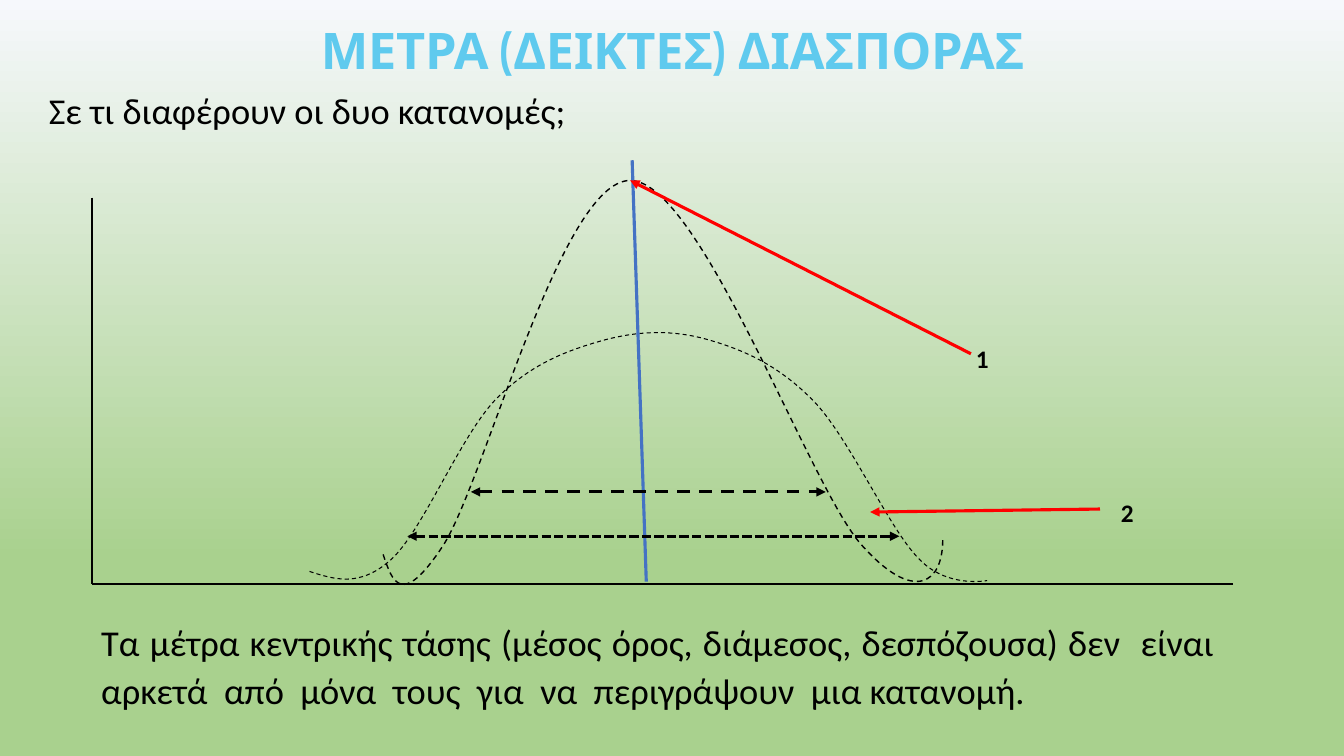
from copy import deepcopy

from lxml import etree
from pptx import Presentation
from pptx.dml.color import RGBColor
from pptx.enum import dml, shapes, text
from pptx.oxml.ns import qn
from pptx.util import Inches, Pt

THEME = {
    "sky": "F6F8FC", "meadow": "A9D18E", "title": "5FCAEE", "ink": "000000",
    "mean": "4472C4", "pointer": "FF0000",
    "title_font": "Cabin", "body_font": "Calibri",
    "title_size": 36, "body_size": 26, "label_size": 18,
}
DASH = dml.MSO_LINE.DASH
SHORT_DASH = dml.MSO_LINE.SQUARE_DOT

TITLE = ("ΜΕΤΡΑ (ΔΕΙΚΤΕΣ) ΔΙΑΣΠΟΡΑΣ", (2.74, 0.17, 7.85, 0.62))
BODY = [
    ("Τα μέτρα κεντρικής τάσης (μέσος όρος, διάμεσος, δεσπόζουσα) δεν  είναι  "
     "αρκετά  από  μόνα  τους  για  να  περιγράψουν  μια κατανομή.",
     (0.99, 6.09, 11.17, 0.95)),
    ("Σε τι διαφέρουν οι δυο κατανομές;", (0.47, 0.82, 5.18, 0.47)),
]
CURVE_LABELS = [("1", (9.58, 3.36, 0.39, 0.35)), ("2", (11.02, 4.88, 0.34, 0.35))]

# Start point, then two control points and an end point for each cubic segment
NARROW_BOX = (3.8, 1.79, 5.55, 4.01)
NARROW_CURVE = [
    (3.8, 5.5),
    (3.89, 5.77), (3.98, 6.04), (4.39, 5.42),
    (4.8, 4.8), (5.56, 1.79), (6.25, 1.79),
    (6.94, 1.79), (8.02, 4.81), (8.54, 5.4),
    (9.06, 5.99), (9.36, 5.8), (9.35, 5.33),
]
WIDE_BOX = (3.07, 3.3, 6.72, 2.47)
WIDE_CURVE = [
    (3.07, 5.67),
    (3.32, 5.75), (3.57, 5.83), (3.88, 5.55),
    (4.19, 5.27), (4.56, 4.34), (4.91, 3.97),
    (5.26, 3.61), (5.62, 3.48), (5.97, 3.38),
    (6.33, 3.28), (6.67, 3.27), (7.02, 3.37),
    (7.37, 3.47), (7.72, 3.62), (8.07, 3.98),
    (8.42, 4.34), (8.82, 5.25), (9.11, 5.54),
    (9.39, 5.84), (9.79, 5.76), (9.79, 5.76),
]
ORIGIN = (0.91, 5.79)
AXES = [((0.91, 1.96), ORIGIN), ((12.23, 5.79), ORIGIN)]
MEAN_LINE = ((6.41, 5.77), (6.27, 1.59))
POINTERS = [((9.63, 3.51), (6.25, 1.79)), ((10.91, 5.05), (8.63, 5.08))]
SPREADS = [((4.67, 4.88), (8.19, 4.88), DASH), ((4.04, 5.32), (8.92, 5.32), SHORT_DASH)]


def rgb(name):
    return RGBColor.from_string(THEME[name])


def paint_background(slide):
    fill = slide.background.fill
    fill.gradient()
    fill.gradient_angle = 270
    top, bottom = fill.gradient_stops
    top.color.rgb, top.position = rgb("sky"), 0
    bottom.color.rgb, bottom.position = rgb("meadow"), 0.74
    stops = slide.background._cSld.find(".//" + qn("a:gsLst"))
    stops.append(deepcopy(stops[-1]))
    stops[-1].set("pos", "100000")


def add_text(slide, words, box, size, font="body_font", color="ink", bold=False):
    frame = slide.shapes.add_textbox(*map(Inches, box)).text_frame
    frame.word_wrap = True
    frame.auto_size = text.MSO_AUTO_SIZE.SHAPE_TO_FIT_TEXT
    paragraph = frame.paragraphs[0]
    paragraph.text = words
    paragraph.font.name = THEME[font]
    paragraph.font.size = Pt(THEME[size])
    paragraph.font.bold = bold
    paragraph.font.color.rgb = rgb(color)
    return frame


def tighten(frame, align, space_before):
    """Cut the insets to a hairline at the top and align the paragraph."""
    frame.margin_left = frame.margin_right = frame.margin_bottom = 0
    frame.margin_top = Pt(1)
    paragraph = frame.paragraphs[0]
    paragraph.alignment = align
    paragraph.space_before = Pt(space_before)
    paragraph._p.get_or_add_pPr().set("marL", str(Pt(1)))


def style_line(line, color, width, dash=None):
    line.color.rgb = rgb(color)
    line.width = Pt(width)
    if dash:
        line.dash_style = dash


def add_line(slide, start, end, color, width, dash=None, arrows=()):
    """Draw a straight line; arrows holds headEnd (start) and/or tailEnd (end)."""
    connector = slide.shapes.add_connector(
        shapes.MSO_CONNECTOR.STRAIGHT, *map(Inches, start + end))
    style_line(connector.line, color, width, dash)
    properties = connector._element.spPr
    for arrow in arrows:
        etree.SubElement(properties.find(qn("a:ln")), qn("a:" + arrow), type="triangle")
    etree.SubElement(properties, qn("a:effectLst"))


def add_curve(slide, box, knots, width):
    """Span the box with a freeform, then give it the cubic segments."""
    left, top, across, down = map(Inches, box)
    builder = slide.shapes.build_freeform(left, top)
    builder.add_line_segments([(left + across, top + down)], close=False)
    curve = builder.convert_to_shape()
    outline = curve._element.find(".//" + qn("a:path"))
    outline.remove(outline.find(qn("a:lnTo")))
    start = outline.find(qn("a:moveTo"))
    start.remove(start[0])
    for number, (x, y) in enumerate(knots):
        if number % 3 == 1:
            segment = etree.SubElement(outline, qn("a:cubicBezTo"))
        etree.SubElement(segment if number else start, qn("a:pt"),
                         x=str(Inches(x) - left), y=str(Inches(y) - top))
    curve.fill.background()
    curve.shadow.inherit = False
    style_line(curve.line, "ink", width, DASH)


def main():
    deck = Presentation()
    deck.slide_width, deck.slide_height = Inches(13.33), Inches(7.5)
    slide = deck.slides.add_slide(deck.slide_layouts[6])
    paint_background(slide)

    title = add_text(slide, *TITLE, "title_size", "title_font", "title", bold=True)
    title.vertical_anchor = text.MSO_ANCHOR.MIDDLE
    tighten(title, text.PP_ALIGN.CENTER, 1.1)
    title.paragraphs[0].runs[0].font._element.set("spc", "-20")
    for words, box in BODY:
        body = add_text(slide, words, box, "body_size")
        tighten(body, text.PP_ALIGN.JUSTIFY, 1)
        body.paragraphs[0].line_spacing = 1.1

    add_curve(slide, NARROW_BOX, NARROW_CURVE, 1)
    for start, end in AXES:
        add_line(slide, start, end, "ink", 1.5)
    add_curve(slide, WIDE_BOX, WIDE_CURVE, 0.75)
    add_line(slide, *MEAN_LINE, "mean", 2.25)
    for start, end in POINTERS:
        add_line(slide, start, end, "pointer", 2.25, arrows=["tailEnd"])
    for words, box in CURVE_LABELS:
        add_text(slide, words, box, "label_size", bold=True)
    for start, end, dash in SPREADS:
        add_line(slide, start, end, "ink", 2.25, dash, ["headEnd", "tailEnd"])

    deck.save("out.pptx")


if __name__ == "__main__":
    main()
